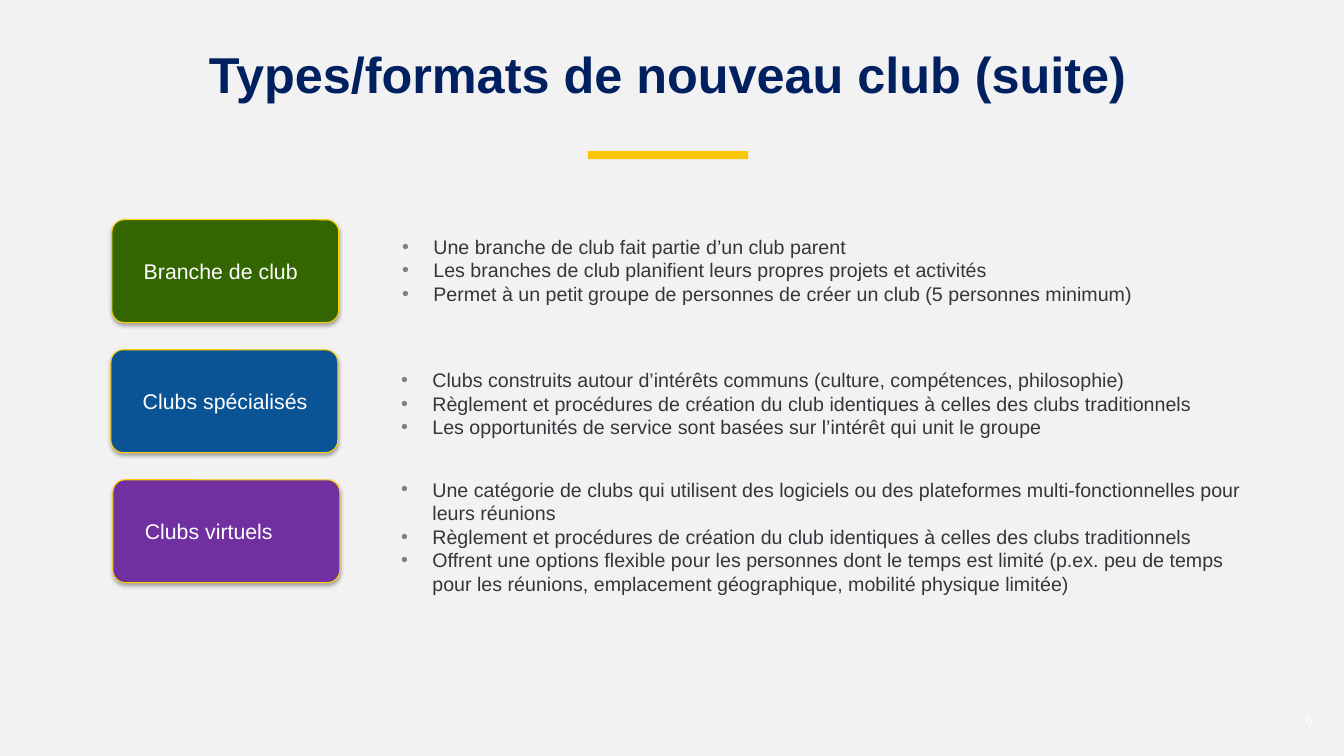
"""Builds a slide presenting three formats of new club."""
import pptx
import pptx.dml.color
import pptx.enum.shapes
import pptx.enum.text
import pptx.oxml
import pptx.oxml.ns
import pptx.util

Inches = pptx.util.Inches
Pt = pptx.util.Pt
RGBColor = pptx.dml.color.RGBColor
Shape = pptx.enum.shapes.MSO_SHAPE
Anchor = pptx.enum.text.MSO_ANCHOR
Align = pptx.enum.text.PP_ALIGN

BACKGROUND = RGBColor(0xF2, 0xF2, 0xF2)
NAVY = RGBColor(0x00, 0x20, 0x60)
GOLD = RGBColor(0xFB, 0xC6, 0x08)
YELLOW = RGBColor(0xFF, 0xD0, 0x00)
GREEN = RGBColor(0x33, 0x66, 0x00)
BLUE = RGBColor(0x0A, 0x54, 0x96)
PURPLE = RGBColor(0x70, 0x30, 0xA0)
TEXT = RGBColor(0x33, 0x37, 0x3B)
WHITE = RGBColor(0xFF, 0xFF, 0xFF)

TITLE = "Types/formats de nouveau club (suite)"
PAGE_NUMBER = "6"
CLUBS = [
    ("Branche de club", GREEN, (1.11, 2.18), (3.58, 2.17), [
        "Une branche de club fait partie d’un club parent",
        "Les branches de club planifient leurs propres projets et activités",
        "Permet à un petit groupe de personnes de créer un club (5 personnes minimum)",
    ]),
    ("Clubs spécialisés", BLUE, (1.1, 3.47), (3.57, 3.49), [
        "Clubs construits autour d’intérêts communs (culture, compétences, philosophie)",
        "Règlement et procédures de création du club identiques à celles des clubs traditionnels",
        "Les opportunités de service sont basées sur l’intérêt qui unit le groupe",
    ]),
    ("Clubs virtuels", PURPLE, (1.12, 4.76), (3.57, 4.81), [
        "Une catégorie de clubs qui utilisent des logiciels ou des plateformes "
        "multi-fonctionnelles pour leurs réunions",
        "Règlement et procédures de création du club identiques à celles des clubs traditionnels",
        "Offrent une options flexible pour les personnes dont le temps est limité (p.ex. peu de "
        "temps pour les réunions, emplacement géographique, mobilité physique limitée)",
    ]),
]
CARD_SIZE = (2.25, 1.02)
DETAIL_SIZE = (8.89, 1.02)
CORNER = 0.12
NAMESPACE = pptx.oxml.ns.nsdecls("a")
SHADOW = (
    f'<a:outerShdw {NAMESPACE} blurRad="{Pt(3.1)}" dist="{Pt(1.8)}" dir="5400000" '
    'algn="t" rotWithShape="0"><a:srgbClr val="000000"><a:alpha val="35000"/>'
    '</a:srgbClr></a:outerShdw>'
)
BULLET = (
    f'<a:buClr {NAMESPACE}><a:srgbClr val="808080"/></a:buClr>',
    f'<a:buFont {NAMESPACE} typeface="Arial"/>',
    f'<a:buChar {NAMESPACE} char="•"/>',
)


def add_block(page, preset, place, size, color):
    box = page.shapes.add_shape(preset, *map(Inches, place + size))
    box.shadow.inherit = False
    box.fill.solid()
    box.fill.fore_color.rgb = color
    box.line.fill.background()
    return box


def set_frame(box, insets, anchor=Anchor.MIDDLE):
    frame = box.text_frame
    frame.word_wrap = True
    frame.vertical_anchor = anchor
    (frame.margin_left, frame.margin_top,
     frame.margin_right, frame.margin_bottom) = map(Inches, insets)
    return frame


def indent(para, margin, first):
    properties = para._p.get_or_add_pPr()
    properties.set("marL", str(Inches(margin)))
    properties.set("indent", str(Inches(first)))
    return properties


def write(para, text, size, color, align=Align.LEFT, bold=False):
    para.alignment = align
    span = para.add_run()
    span.text = text
    span.font.name = "Arial"
    span.font.size = Pt(size)
    span.font.bold = bold
    span.font.color.rgb = color


def add_details(page, place, lines):
    box = add_block(page, Shape.RECTANGLE, place, DETAIL_SIZE, BACKGROUND)
    frame = set_frame(box, (0.1,) * 4)
    for index, line in enumerate(lines):
        para = frame.add_paragraph() if index else frame.paragraphs[0]
        para.level = 1
        properties = indent(para, 0.62, -0.31)
        for element in BULLET:
            properties.append(pptx.oxml.parse_xml(element))
        write(para, line, 14, TEXT)


def add_card(page, label, color, place):
    box = add_block(page, Shape.ROUNDED_RECTANGLE, place, CARD_SIZE, color)
    box.adjustments[0] = CORNER
    box.line.color.rgb = YELLOW
    box.line.width = Pt(0.75)
    effects = box._element.spPr.find(pptx.oxml.ns.qn("a:effectLst"))
    effects.append(pptx.oxml.parse_xml(SHADOW))
    para = set_frame(box, (0.08,) * 4).paragraphs[0]
    indent(para, 0.2, 0)
    write(para, label, 15.2, WHITE)


def main():
    deck = pptx.Presentation()
    deck.slide_width, deck.slide_height = Inches(13.33), Inches(7.5)
    page = deck.slides.add_slide(deck.slide_layouts[6])
    page.background.fill.solid()
    page.background.fill.fore_color.rgb = BACKGROUND

    title = page.shapes.add_textbox(*map(Inches, (-0.04, 0.5, 13.33, 0.56)))
    para = set_frame(title, (0, 0, 0, 0.05), Anchor.TOP).paragraphs[0]
    para.line_spacing = 0.9
    write(para, TITLE, 36, NAVY, Align.CENTER, True)
    add_block(page, Shape.RECTANGLE, (5.83, 1.5), (1.59, 0.08), GOLD)

    for label, color, card_place, detail_place, lines in CLUBS:
        add_details(page, detail_place, lines)
        add_card(page, label, color, card_place)

    number = page.shapes.add_textbox(*map(Inches, (12.5, 6.98, 0.52, 0.3)))
    para = set_frame(number, (0, 0, 0, 0)).paragraphs[0]
    write(para, PAGE_NUMBER, 10, WHITE, Align.RIGHT)
    deck.save("out.pptx")


if __name__ == "__main__":
    main()
